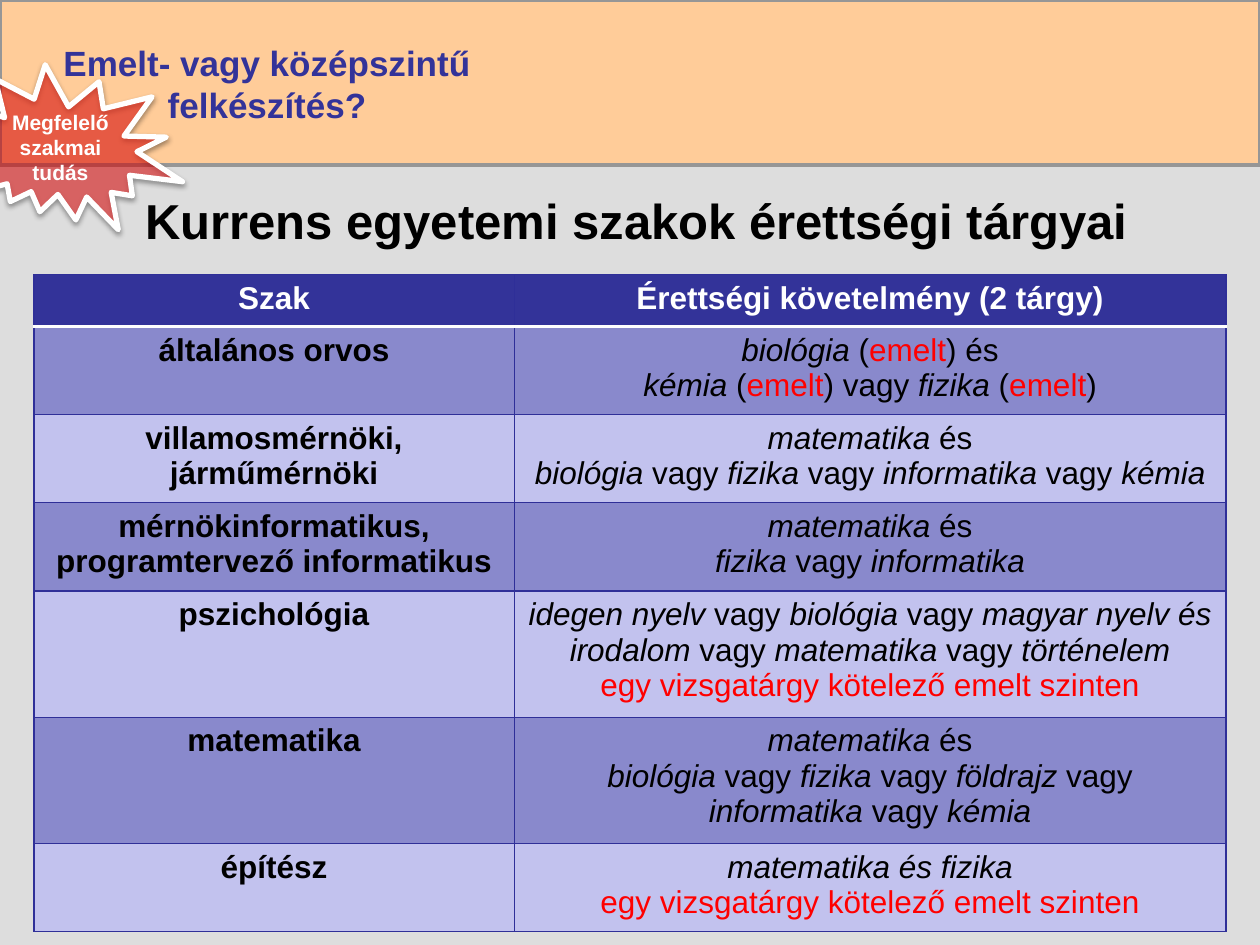
import pptx
import pptx.util
from lxml import etree
from pptx.dml.color import RGBColor
from pptx.enum.shapes import MSO_SHAPE
from pptx.enum.text import MSO_ANCHOR, PP_ALIGN
from pptx.oxml import parse_xml
from pptx.oxml.ns import nsdecls, qn
from pptx.util import Inches, Pt

FONT = "Arial"
COLORS = {
    "white": "FFFFFF", "black": "000000", "red": "FF0000",
    "body": "DDDDDD", "banner": "FFCC99", "banner_line": "969696",
    "navy": "333399", "grid": "2F2F98",
    "dark_row": "8989CC", "light_row": "C2C2EE",
}

# In the texts, *...* is italic, !...! is red and | breaks the line.
HEADER = ("Szak", "Érettségi követelmény (2 tárgy)")
COURSES = [
    ("általános orvos",
     ["*biológia* (!emelt!) és",
      "*kémia* (!emelt!) vagy *fizika* (!emelt!)"]),
    ("villamosmérnöki,|járműmérnöki",
     ["*matematika* és|*biológia* vagy *fizika* vagy *informatika* vagy *kémia*"]),
    ("mérnökinformatikus,|programtervező informatikus",
     ["*matematika* és", "*fizika* vagy *informatika*"]),
    ("pszichológia",
     ["*idegen nyelv *vagy *biológia* vagy *magyar nyelv és irodalom* vagy "
      "*matematika* vagy *történelem*|!egy vizsgatárgy kötelező emelt szinten!"]),
    ("matematika",
     ["*matematika* és",
      "*biológia* vagy *fizika* vagy *földrajz* vagy *informatika* vagy *kémia*"]),
    ("építész",
     ["*matematika és fizika*", "!egy vizsgatárgy kötelező emelt szinten!"]),
]


def rgb(name):
    return RGBColor.from_string(COLORS[name])


def add_marked_runs(paragraph, text):
    for line_number, line in enumerate(text.split("|")):
        if line_number:
            paragraph.add_line_break()
        for i, part in enumerate(line.split("*")):
            for j, piece in enumerate(part.split("!")):
                if not piece:
                    continue
                run = paragraph.add_run()
                run.text = piece
                if i % 2:
                    run.font.italic = True
                if j % 2:
                    run.font.color.rgb = rgb("red")


def write(frame, paragraphs, size, color, bold=True):
    for i, text in enumerate(paragraphs):
        paragraph = frame.add_paragraph() if i else frame.paragraphs[0]
        paragraph.alignment = PP_ALIGN.CENTER
        font = paragraph.font
        font.name, font.size, font.bold = FONT, Pt(size), bold
        font.color.rgb = rgb(color)
        add_marked_runs(paragraph, text)


def add_label(slide, place, text, size, color, anchor=MSO_ANCHOR.TOP):
    frame = slide.shapes.add_textbox(*map(Inches, place)).text_frame
    frame.word_wrap = True
    frame.vertical_anchor = anchor
    write(frame, [text], size, color)


def add_figure(slide, kind, place, fill, line=None, width=0):
    figure = slide.shapes.add_shape(kind, *map(Inches, place))
    figure.shadow.inherit = False
    figure.fill.solid()
    figure.fill.fore_color.rgb = rgb(fill)
    if line:
        figure.line.color.rgb = rgb(line)
        figure.line.width = Pt(width)
    else:
        figure.line.fill.background()
    return figure


def add_burst(slide):
    """Tilted, see-through star with a soft shadow below it."""
    burst = add_figure(slide, MSO_SHAPE.EXPLOSION2, (-0.35, 0.48, 1.79, 1.43),
                       "red", "white", 3)
    burst.rotation = 32.4
    properties = burst._element.spPr
    fill_color = properties.find(qn("a:solidFill"))[0]
    etree.SubElement(fill_color, qn("a:alpha"), val="46000")
    properties.find(qn("a:effectLst")).append(parse_xml(
        f'<a:outerShdw {nsdecls("a")} blurRad="{Pt(3.1)}" dist="{Pt(1.6)}" '
        f'dir="5400000" rotWithShape="0"><a:srgbClr val="{COLORS["black"]}">'
        '<a:alpha val="38000"/></a:srgbClr></a:outerShdw>'))


def set_borders(cell, row):
    """Thin grid lines, with a thick white rule under the header row."""
    white_side = {0: "B", 1: "T"}.get(row)
    properties = cell._tc.get_or_add_tcPr()
    for position, side in enumerate("LRTB"):
        color, width = ("white", 2) if side == white_side else ("grid", 0.75)
        properties.insert(position, parse_xml(
            f'<a:ln{side} {nsdecls("a")} w="{Pt(width)}"><a:solidFill>'
            f'<a:srgbClr val="{COLORS[color]}"/></a:solidFill></a:ln{side}>'))


def fill_cell(cell, row, fill, paragraphs, color, bold):
    cell.fill.solid()
    cell.fill.fore_color.rgb = rgb(fill)
    set_borders(cell, row)
    write(cell.text_frame, paragraphs, 18, color, bold)


def add_course_table(slide):
    place = map(Inches, (0.27, 2.18, 9.46, 5.21))
    holder = slide.shapes.add_table(len(COURSES) + 1, 2, *place)
    table = holder.table
    for column, width in zip(table.columns, (3.81, 5.65)):
        column.width = Inches(width)
    for row in table.rows:
        row.height = Inches(0.41)  # rows grow with their text
    holder.height = Inches(5.21)
    for column, heading in enumerate(HEADER):
        fill_cell(table.cell(0, column), 0, "navy", [heading], "white", True)
    for row, (course, requirement) in enumerate(COURSES, 1):
        fill = "dark_row" if row % 2 else "light_row"
        fill_cell(table.cell(row, 0), row, fill, [course], "black", True)
        fill_cell(table.cell(row, 1), row, fill, requirement, "black", False)


def main():
    deck = pptx.Presentation()
    deck.slide_width, deck.slide_height = Inches(10), Inches(7.5)
    slide = deck.slides.add_slide(deck.slide_layouts[6])

    add_figure(slide, MSO_SHAPE.RECTANGLE, (0, 1.31, 10, 6.19), "body")
    add_figure(slide, MSO_SHAPE.RECTANGLE, (0, 0, 10, 1.31),
               "banner", "banner_line", 2)
    add_label(slide, (0.27, 0.28, 3.7, 0.77),
              "Emelt- vagy középszintű felkészítés?", 20, "navy")
    add_label(slide, (0.51, 1.39, 9.08, 0.71),
              "Kurrens egyetemi szakok érettségi tárgyai", 28, "black",
              MSO_ANCHOR.MIDDLE)
    add_course_table(slide)
    add_burst(slide)
    add_label(slide, (-0.16, 0.82, 1.28, 0.71),
              "Megfelelő szakmai tudás", 12, "white")
    deck.save("out.pptx")


if __name__ == "__main__":
    main()
